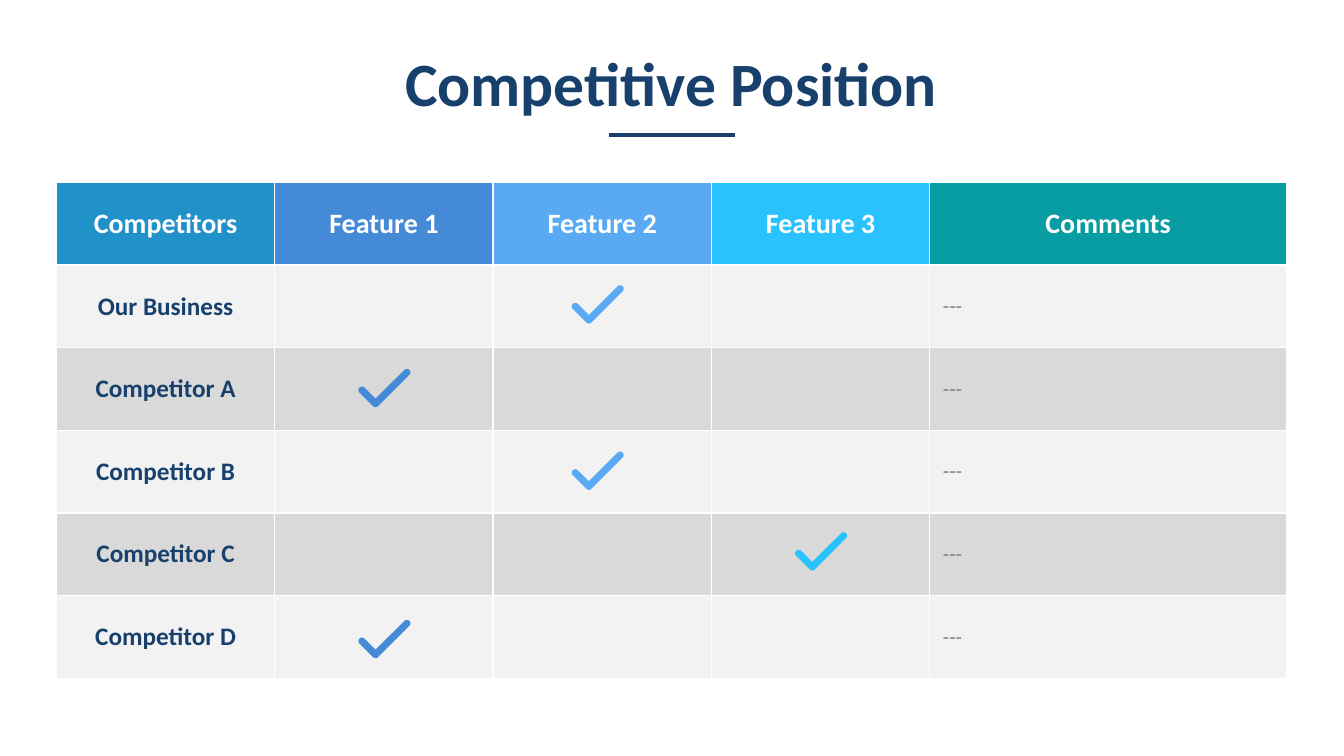
import math
from lxml import etree
from pptx import Presentation
from pptx import util as u
from pptx.dml.color import RGBColor
from pptx.enum import shapes, text
from pptx.oxml import ns

NAVY = RGBColor(0x17, 0x40, 0x6D)
WHITE = RGBColor(0xFF, 0xFF, 0xFF)
GRAY = RGBColor(0x80, 0x80, 0x80)
BANDS = [RGBColor(0xF2, 0xF2, 0xF2), RGBColor(0xD9, 0xD9, 0xD9)]
FONT = "Calibri"

TITLE = "Competitive Position"
COLUMNS = [
    ("Competitors", 0.1775, RGBColor(0x21, 0x91, 0xC9)),
    ("Feature 1", 0.1775, RGBColor(0x44, 0x8A, 0xD7)),
    ("Feature 2", 0.1775, RGBColor(0x59, 0xAA, 0xF2)),
    ("Feature 3", 0.1775, RGBColor(0x29, 0xC2, 0xFF)),
    ("Comments", 0.29, RGBColor(0x08, 0x9C, 0xA3)),
]
COMPETITORS = [
    ("Our Business", 2, 0.20, "---"),
    ("Competitor A", 1, 0.21, "---"),
    ("Competitor B", 2, 0.21, "---"),
    ("Competitor C", 3, 0.19, "---"),
    ("Competitor D", 1, 0.24, "---"),
]
CHECK_INDENT = {1: 0.83, 2: 0.78, 3: 0.83}

SLIDE_W, SLIDE_H = 13.33, 7.5
GRID_LEFT, GRID_TOP, GRID_W, ROW_H = 0.56, 1.81, 12.2, 0.82
RULE_Y, RULE_W = 1.34, 1.25
STROKE_R = 0.035
CHECK_ARCS = [(0.48, 0.035, 225, 405), (0.17, 0.345, 45, 135), (0.035, 0.21, 135, 315)]
CHECK_CROOK = (0.17, 0.295)


def write(paragraph, words, size, color, bold=True, align=text.PP_ALIGN.CENTER):
    paragraph.text = words
    paragraph.alignment = align
    font = paragraph.font
    font.name, font.size, font.bold = FONT, u.Pt(size), bold
    font.color.rgb = color


def add_borders(cell):
    properties = cell._tc.get_or_add_tcPr()
    for index, side in enumerate(("lnL", "lnR", "lnT", "lnB")):
        border = etree.Element(ns.qn("a:" + side), w=str(u.Pt(1)))
        fill = etree.SubElement(border, ns.qn("a:solidFill"))
        etree.SubElement(fill, ns.qn("a:srgbClr"), val=str(WHITE))
        properties.insert(index, border)


def style_cell(cell, color):
    cell.fill.solid()
    cell.fill.fore_color.rgb = color
    cell.margin_left = cell.margin_right = u.Inches(0.13)
    cell.margin_top = cell.margin_bottom = 0
    cell.vertical_anchor = text.MSO_ANCHOR.MIDDLE
    add_borders(cell)


def add_check(slide, left, top, color):
    outline = [
        (x + STROKE_R * math.cos(math.radians(angle)), y + STROKE_R * math.sin(math.radians(angle)))
        for x, y, start, end in CHECK_ARCS
        for angle in range(start, end + 1, 15)
    ] + [CHECK_CROOK]
    points = [(u.Inches(left + x), u.Inches(top + y)) for x, y in outline]
    builder = slide.shapes.build_freeform(*points[0])
    builder.add_line_segments(points[1:], close=True)
    check = builder.convert_to_shape()
    check.shadow.inherit = False
    check.fill.solid()
    check.fill.fore_color.rgb = color
    check.line.fill.background()


def add_grid(slide):
    rows = len(COMPETITORS) + 1
    grid = slide.shapes.add_table(
        rows, len(COLUMNS), u.Inches(GRID_LEFT), u.Inches(GRID_TOP),
        u.Inches(GRID_W), u.Inches(ROW_H * rows)).table
    grid.first_row = grid.horz_banding = False
    for row in grid.rows:
        row.height = u.Inches(ROW_H)
    for col, (heading, share, color) in enumerate(COLUMNS):
        grid.columns[col].width = u.Inches(GRID_W * share)
        for row in range(rows):
            style_cell(grid.cell(row, col), BANDS[(row - 1) % 2] if row else color)
        write(grid.cell(0, col).text_frame.paragraphs[0], heading, 20, WHITE)
    for row, (competitor, feature, drop, comment) in enumerate(COMPETITORS, 1):
        write(grid.cell(row, 0).text_frame.paragraphs[0], competitor, 18, NAVY)
        write(grid.cell(row, len(COLUMNS) - 1).text_frame.paragraphs[0],
              comment, 15, GRAY, False, text.PP_ALIGN.LEFT)
        column_left = GRID_LEFT + GRID_W * sum(share for _, share, _ in COLUMNS[:feature])
        add_check(slide, column_left + CHECK_INDENT[feature],
                  GRID_TOP + ROW_H * row + drop, COLUMNS[feature][2])


def add_title(slide):
    title = slide.shapes.add_textbox(
        u.Inches(GRID_LEFT), u.Inches(0.5), u.Inches(GRID_W), u.Inches(0.72)).text_frame
    title.word_wrap = True
    title.vertical_anchor = text.MSO_ANCHOR.MIDDLE
    title.margin_left = title.margin_right = title.margin_top = title.margin_bottom = 0
    write(title.paragraphs[0], TITLE, 44, NAVY)
    title.paragraphs[0].line_spacing = 0.9
    rule_left = (SLIDE_W - RULE_W) / 2
    rule = slide.shapes.add_connector(
        shapes.MSO_CONNECTOR.STRAIGHT, u.Inches(rule_left), u.Inches(RULE_Y),
        u.Inches(rule_left + RULE_W), u.Inches(RULE_Y))
    rule.line.color.rgb = NAVY
    rule.line.width = u.Pt(3)
    etree.SubElement(rule._element.spPr, ns.qn("a:effectLst"))


def main():
    deck = Presentation()
    deck.slide_width, deck.slide_height = u.Inches(SLIDE_W), u.Inches(SLIDE_H)
    slide = deck.slides.add_slide(deck.slide_layouts[6])
    add_grid(slide)
    add_title(slide)
    deck.save("out.pptx")


if __name__ == "__main__":
    main()
